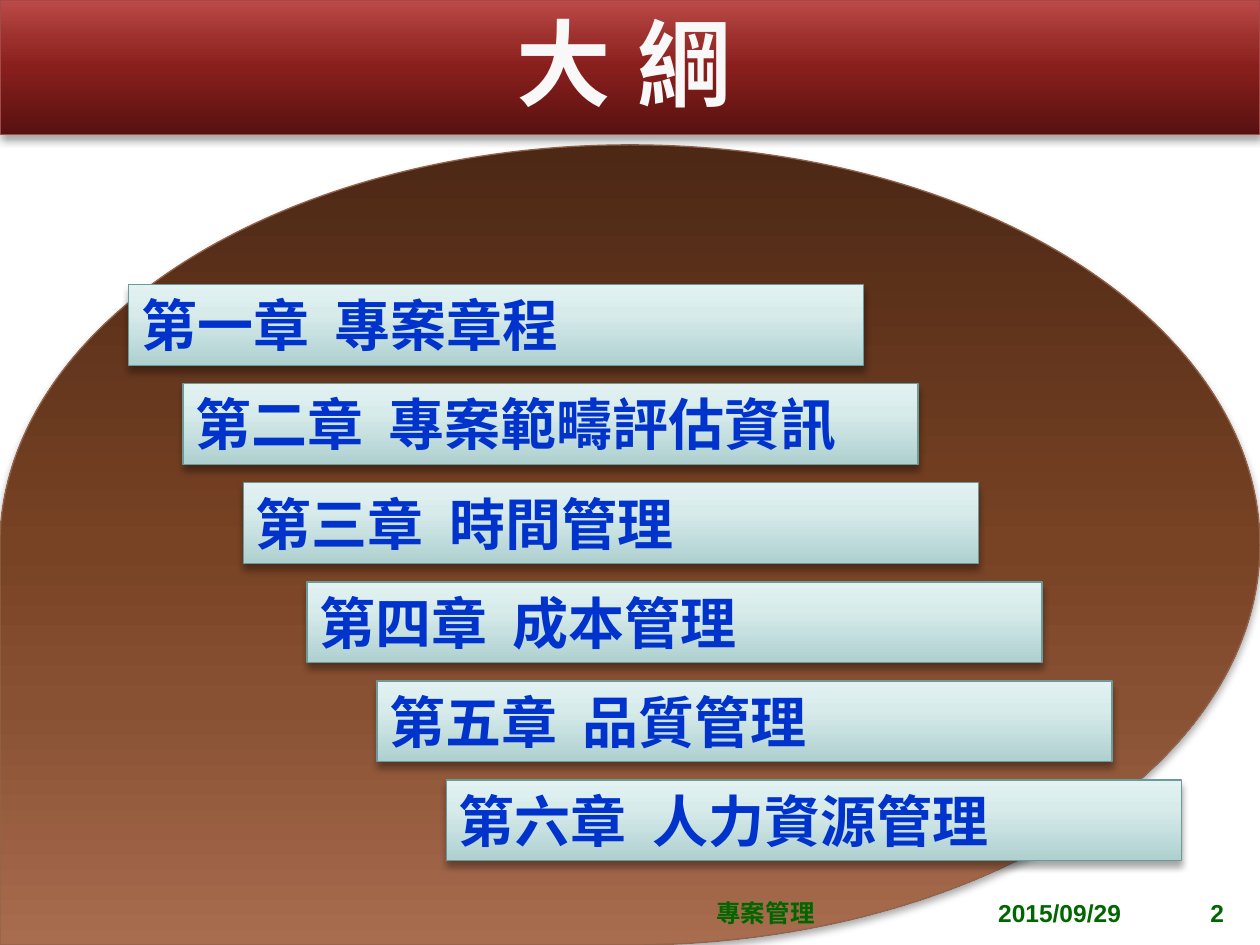
import pptx
import pptx.util
import pptx.dml.color
import pptx.enum.shapes
import pptx.enum.text
import pptx.oxml
import pptx.oxml.ns

Pt = pptx.util.Pt
SHAPES = pptx.enum.shapes.MSO_SHAPE
ANCHOR = pptx.enum.text.MSO_ANCHOR
ALIGN = pptx.enum.text.PP_ALIGN
FIT = pptx.enum.text.MSO_AUTO_SIZE
NS = pptx.oxml.ns.nsdecls("a")

BAND = ((0, "571110"), (50, "891F1D"), (70, "9B2F2C"), (100, "BC4A48"))
DROP = ((0, "4C2815"), (50, "784224"), (70, "895133"), (100, "A86C4F"))
BAR = ((0, "AFD0D0"), (65, "D8EBEB"), (100, "E2F2F2"))

# Chapter heading and the left edge of its bar within the list
CHAPTERS = (
    ("第一章  專案章程", 0),
    ("第二章  專案範疇評估資訊", 31),
    ("第三章  時間管理", 65.5),
    ("第四章  成本管理", 102),
    ("第五章  品質管理", 142),
    ("第六章  人力資源管理", 181.5),
)


def color(value):
    return pptx.dml.color.RGBColor.from_string(value)


def set_all(target, values):
    for name, value in values.items():
        setattr(target, name, value)


def write(shape, text, size, ink, align, frame_format, spacing=0):
    frame = shape.text_frame
    set_all(frame, {"word_wrap": True, **frame_format})
    paragraph = frame.paragraphs[0]
    paragraph.alignment = align
    run = paragraph.add_run()
    run.text = text
    set_all(run.font, {"name": "Arial", "size": Pt(size), "bold": True})
    run.font.color.rgb = color(ink)
    properties = run._r.get_or_add_rPr()
    properties.set("lang", "zh-TW")
    if spacing:
        properties.set("spc", str(round(spacing * 100)))


def add_panel(slide, kind, box, stops, edge):
    """Add a shape with a vertical gradient, a thin edge and a soft shadow."""
    panel = slide.shapes.add_shape(kind, *map(Pt, box))
    panel.fill.gradient()
    panel.fill.gradient_angle = 90
    stop_list = panel._element.spPr.find(".//" + pptx.oxml.ns.qn("a:gsLst"))
    for stop in list(stop_list):
        stop_list.remove(stop)
    for position, value in stops:
        stop_list.append(pptx.oxml.parse_xml(
            f'<a:gs {NS} pos="{position * 1000}"><a:srgbClr val="{value}"/></a:gs>'))
    panel.line.color.rgb = color(edge)
    panel.line.width = Pt(0.75)
    panel.shadow.inherit = False
    effects = panel._element.spPr.find(pptx.oxml.ns.qn("a:effectLst"))
    effects.append(pptx.oxml.parse_xml(
        f'<a:outerShdw {NS} blurRad="{Pt(4)}" dist="{Pt(3)}" dir="5400000" '
        'rotWithShape="0"><a:srgbClr val="000000"><a:alpha val="35000"/>'
        '</a:srgbClr></a:outerShdw>'))
    return panel


def add_header(slide, left, top, width, height):
    add_panel(slide, SHAPES.RECTANGLE, (left, top, width, height), BAND, "A24A48")
    title = slide.shapes.title
    set_all(title, {"left": Pt(left + 33), "top": Pt(top - 9.5),
                    "width": Pt(width - 72), "height": Pt(height + 13)})
    write(title, "大 綱", 54, "F8F8F8", ALIGN.CENTER,
          {"vertical_anchor": ANCHOR.MIDDLE, "auto_size": FIT.NONE}, 1.5)
    # Bring the title in front of the band
    slide.shapes._spTree.append(title._element)


def add_backdrop(slide, left, top, width, height):
    drop = add_panel(slide, SHAPES.TEAR, (left, top, width, height), DROP, "91644B")
    for flip in ("flipH", "flipV"):
        drop._element.spPr.xfrm.set(flip, "1")


def add_footer(slide, left, top, width, height):
    date_width, number_width = 151, 29
    topic_width = width - date_width - number_width
    for text, part_width in (("專案管理", topic_width), ("2015/09/29", date_width),
                             ("2", number_width)):
        part = slide.shapes.add_textbox(*map(Pt, (left, top, part_width, height)))
        write(part, text, 14, "006600", ALIGN.CENTER,
              {"vertical_anchor": ANCHOR.BOTTOM})
        left += part_width


def add_chapters(slide, left, top, width, height):
    bar_width, bar_height = 420, 46
    step = (height - bar_height) / (len(CHAPTERS) - 1)
    for row, (heading, indent) in enumerate(CHAPTERS):
        box = (left + indent, top + row * step, bar_width, bar_height)
        bar = add_panel(slide, SHAPES.RECTANGLE, box, BAR, "6A9A9A")
        write(bar, heading, 32, "0033CC", ALIGN.LEFT,
              {"vertical_anchor": ANCHOR.TOP, "auto_size": FIT.SHAPE_TO_FIT_TEXT})


def main():
    deck = pptx.Presentation()
    set_all(deck, {"slide_width": Pt(720), "slide_height": Pt(540)})
    slide = deck.slides.add_slide(deck.slide_layouts[5])
    add_backdrop(slide, 0, 82.8, 720, 457.2)
    add_header(slide, 0, 0, 720, 77)
    add_footer(slide, 345, 505, 365, 28.5)
    add_chapters(slide, 73.5, 162.7, 601.5, 329)
    deck.save("out.pptx")


if __name__ == "__main__":
    main()
